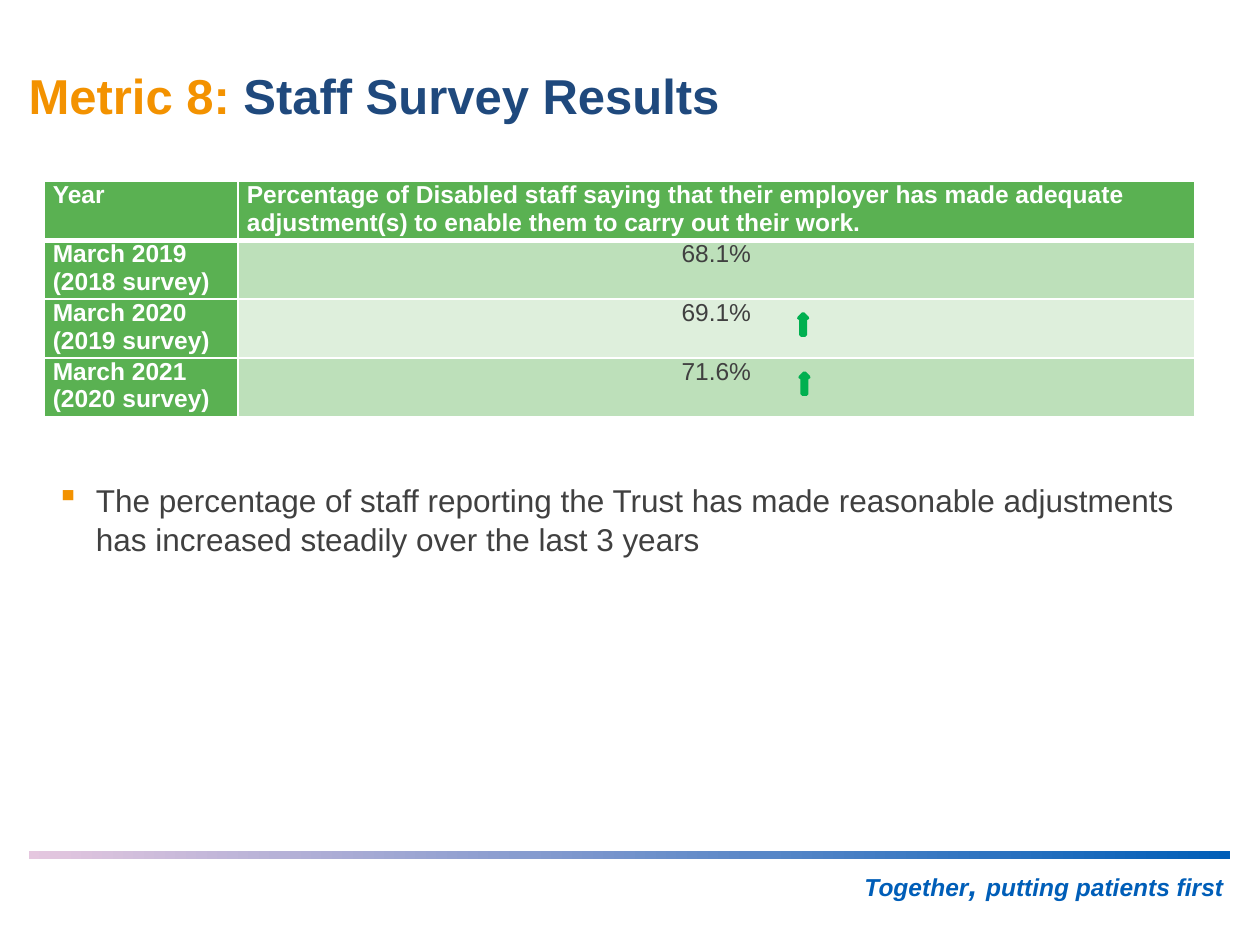
from lxml import etree
from pptx import Presentation
from pptx.dml.color import RGBColor
from pptx.enum.shapes import MSO_SHAPE
from pptx.enum.text import MSO_ANCHOR, PP_ALIGN
from pptx.oxml.ns import qn
from pptx.util import Pt

LEFT, CENTER, RIGHT = PP_ALIGN.LEFT, PP_ALIGN.CENTER, PP_ALIGN.RIGHT
TOP, MIDDLE = MSO_ANCHOR.TOP, MSO_ANCHOR.MIDDLE
RECTANGLE, UP_ARROW = MSO_SHAPE.RECTANGLE, MSO_SHAPE.UP_ARROW

WHITE = RGBColor(0xFF, 0xFF, 0xFF)
ORANGE = RGBColor(0xF3, 0x92, 0x00)
NAVY = RGBColor(0x1F, 0x49, 0x7D)
BLUE = RGBColor(0x00, 0x5E, 0xB8)
PINK = RGBColor(0xE5, 0xC7, 0xDF)
GREY = RGBColor(0x40, 0x40, 0x40)
GREEN = RGBColor(0x5A, 0xB1, 0x52)
BANDS = (RGBColor(0xBD, 0xE0, 0xBA), RGBColor(0xDE, 0xEF, 0xDC))
ARROW_GREEN = RGBColor(0x00, 0xB0, 0x50)

TITLE = [("Metric 8: ", {"color": ORANGE}), ("Staff Survey Results", {})]
HEADER = ("Year", "Percentage of Disabled staff saying that their employer has made "
          "adequate adjustment(s) to enable them to carry out their work.")
RESULTS = [
    (("March 2019", "(2018 survey)"), "68.1%"),
    (("March 2020", "(2019 survey)"), "69.1%"),
    (("March 2021", "(2020 survey)"), "71.6%"),
]
FINDING = ("The percentage of staff reporting the Trust has made reasonable "
           "adjustments has increased steadily over the last 3 years")
MOTTO = [("Together", {}), (", ", {"size": 18}), ("putting patients first", {})]

TABLE_BOX = (25.2, 103.7, 657.4, 134.6)
COLUMN_WIDTHS = (110.9, 546.5)
ARROWS = [(456.5, 179.3), (457.2, 213.1)]
ARROW_SIZE = (5, 12.2)


def write(frame, paragraphs, align=LEFT, anchor=TOP, **style):
    """Fill a text frame; a paragraph is a string or a list of (text, style) spans."""
    frame.word_wrap = True
    frame.vertical_anchor = anchor
    for index, spans in enumerate(paragraphs):
        para = frame.add_paragraph() if index else frame.paragraphs[0]
        para.alignment = align
        for text, changes in [(spans, {})] if isinstance(spans, str) else spans:
            look = {"size": 14, "color": GREY, "bold": False, "italic": False,
                    **style, **changes}
            span = para.add_run()
            span.text = text
            span.font.name = "Arial"
            span.font.size = Pt(look["size"])
            span.font.color.rgb = look["color"]
            span.font.bold = look["bold"]
            span.font.italic = look["italic"]


def add_text(page, place, paragraphs, **style):
    box = page.shapes.add_textbox(*map(Pt, place))
    write(box.text_frame, paragraphs, **style)
    return box


def add_solid_child(parent, tag, color, **attributes):
    child = etree.SubElement(parent, qn(tag), **attributes)
    fill = etree.SubElement(child, qn("a:solidFill"))
    etree.SubElement(fill, qn("a:srgbClr"), val=str(color))


def add_bullet(para, char, color, indent):
    props = para._p.get_or_add_pPr()
    props.set("marL", str(Pt(indent)))
    props.set("indent", str(-Pt(indent)))
    bullet_color = etree.SubElement(props, qn("a:buClr"))
    etree.SubElement(bullet_color, qn("a:srgbClr"), val=str(color))
    etree.SubElement(props, qn("a:buChar"), char=char)


def style_cell(cell, paragraphs, fill, top=1, bottom=1, **style):
    write(cell.text_frame, paragraphs, **style)
    cell.margin_left = cell.margin_right = Pt(5)
    cell.margin_top = cell.margin_bottom = 0
    props = cell._tc.get_or_add_tcPr()
    for side, width in (("L", 1), ("R", 1), ("T", top), ("B", bottom)):
        add_solid_child(props, f"a:ln{side}", WHITE, w=str(Pt(width)))
    cell.fill.solid()
    cell.fill.fore_color.rgb = fill


def add_results_table(page):
    rows = len(RESULTS) + 1
    table = page.shapes.add_table(rows, 2, *map(Pt, TABLE_BOX)).table
    for column, width in zip(table.columns, COLUMN_WIDTHS):
        column.width = Pt(width)
    for row in table.rows:
        row.height = Pt(TABLE_BOX[3] / rows)
    for column, label in enumerate(HEADER):
        style_cell(table.cell(0, column), [label], GREEN, bottom=3,
                   color=WHITE, bold=True)
    for row, (year, share) in enumerate(RESULTS, 1):
        top = 3 if row == 1 else 1
        style_cell(table.cell(row, 0), year, GREEN, top=top, color=WHITE, bold=True)
        style_cell(table.cell(row, 1), [share], BANDS[(row - 1) % 2], top=top,
                   align=CENTER)


def add_rule(page):
    rule = page.shapes.add_shape(RECTANGLE, Pt(16.6), Pt(486.6), Pt(686.2), Pt(4.3))
    rule.shadow.inherit = False
    rule.line.fill.background()
    rule.fill.gradient()
    rule.fill.gradient_angle = 180
    for stop, color in zip(rule.fill.gradient_stops, (BLUE, PINK)):
        stop.color.rgb = color


def add_rise_arrow(page, left, top):
    arrow = page.shapes.add_shape(UP_ARROW, Pt(left), Pt(top), *map(Pt, ARROW_SIZE))
    arrow.shadow.inherit = False
    arrow.fill.solid()
    arrow.fill.fore_color.rgb = ARROW_GREEN
    arrow.line.color.rgb = ARROW_GREEN
    arrow.line.width = Pt(2)


def main():
    deck = Presentation()
    deck.slide_width, deck.slide_height = Pt(720), Pt(540)
    page = deck.slides.add_slide(deck.slide_layouts[6])

    add_text(page, (478, 491, 228.3, 28.8), [MOTTO], align=RIGHT,
             color=BLUE, bold=True, italic=True)
    add_rule(page)
    title = add_text(page, (1.4, 9.4, 579.6, 90), [TITLE], anchor=MIDDLE,
                     size=28, color=NAVY, bold=True)
    title.text_frame.margin_left = Pt(15)

    finding = add_text(page, (25.2, 270, 674.6, 72.7), [FINDING], size=18)
    para = finding.text_frame.paragraphs[0]
    add_bullet(para, "▪", ORANGE, 22.5)
    para.line_spacing = 1.05

    add_results_table(page)
    for left, top in ARROWS:
        add_rise_arrow(page, left, top)
    deck.save("out.pptx")


if __name__ == "__main__":
    main()
